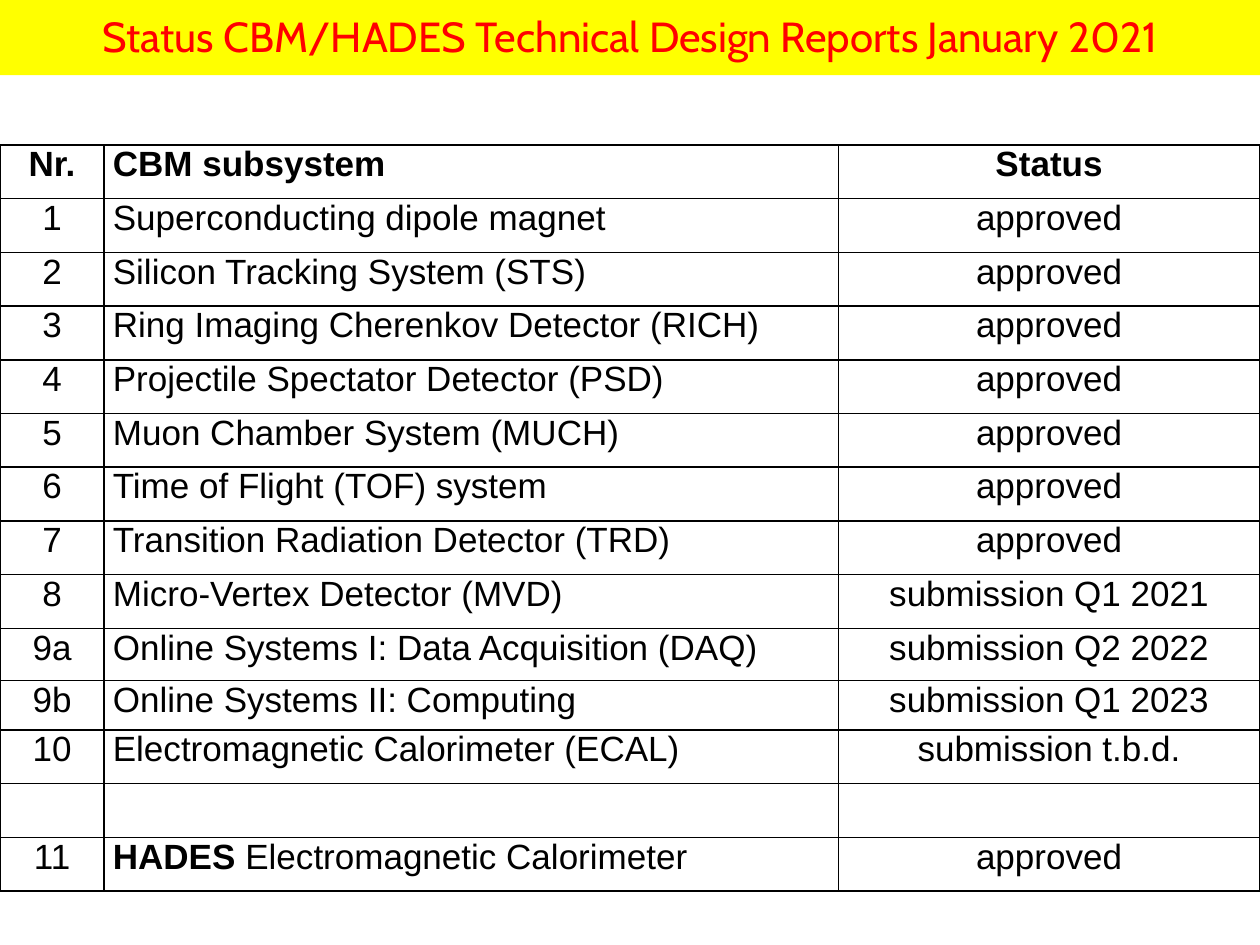
from dataclasses import dataclass

from lxml import etree
from pptx import Presentation
from pptx import util as u
from pptx.dml import color
from pptx.enum import shapes, text
from pptx.oxml import ns


@dataclass(frozen=True)
class Theme:
    banner: str = "FFFF00"
    title: str = "FF0000"
    ink: str = "000000"
    title_font: str = "Cabin"
    table_font: str = "Arial"
    title_size: float = 24
    table_size: float = 20
    border: float = 1
    cell_margin: float = 5


@dataclass
class Builder:
    theme: Theme
    slide: object

    def style(self, paragraph, name, size, rgb, align, bold=False):
        paragraph.alignment = align
        font = paragraph.font
        font.name, font.size, font.bold = name, u.Pt(size), bold
        font.color.rgb = color.RGBColor.from_string(rgb)

    def banner(self, wording, left, top, width, height):
        theme = self.theme
        shape = self.slide.shapes.add_shape(
            shapes.MSO_SHAPE.RECTANGLE, *map(u.Pt, (left, top, width, height)))
        shape.shadow.inherit = False
        shape.fill.solid()
        shape.fill.fore_color.rgb = color.RGBColor.from_string(theme.banner)
        shape.line.fill.background()
        frame = shape.text_frame
        frame.word_wrap = True
        frame.vertical_anchor = text.MSO_ANCHOR.MIDDLE
        paragraph = frame.paragraphs[0]
        paragraph.text = wording
        self.style(paragraph, theme.title_font, theme.title_size, theme.title,
                   text.PP_ALIGN.CENTER)

    def borders(self, cell):
        properties = cell._tc.get_or_add_tcPr()
        for position, side in enumerate(("lnL", "lnR", "lnT", "lnB")):
            line = etree.Element(ns.qn(f"a:{side}"), w=str(u.Pt(self.theme.border)))
            fill = etree.SubElement(line, ns.qn("a:solidFill"))
            etree.SubElement(fill, ns.qn("a:srgbClr"), val=self.theme.ink)
            properties.insert(position, line)

    def cell(self, cell, wording, align, bold):
        theme = self.theme
        cell.margin_left = cell.margin_right = u.Pt(theme.cell_margin)
        cell.margin_top = cell.margin_bottom = u.Pt(0)
        cell.fill.background()
        self.borders(cell)
        paragraph = cell.text_frame.paragraphs[0]
        if isinstance(wording, tuple):
            strong, rest = wording
            for part, weight in ((strong, True), (rest, False)):
                run = paragraph.add_run()
                run.text, run.font.bold = part, weight
        else:
            paragraph.text = wording
        self.style(paragraph, theme.table_font, theme.table_size, theme.ink,
                   align, bold)

    def table(self, rows, left, top, widths, heights, aligns):
        table = self.slide.shapes.add_table(
            len(rows), len(widths), u.Pt(left), u.Pt(top),
            u.Pt(sum(widths)), u.Pt(sum(heights))).table
        table.first_row = table.horz_banding = False
        for column, width in zip(table.columns, widths):
            column.width = u.Pt(width)
        for index, (row, height) in enumerate(zip(rows, heights)):
            table.rows[index].height = u.Pt(height)
            for position, (wording, align) in enumerate(zip(row, aligns)):
                self.cell(table.cell(index, position), wording, align, index == 0)


SUBSYSTEMS = [
    ("Nr.", "CBM subsystem", "Status"),
    ("1", "Superconducting dipole magnet", "approved"),
    ("2", "Silicon Tracking System (STS)", "approved"),
    ("3", "Ring Imaging Cherenkov Detector (RICH)", "approved"),
    ("4", "Projectile Spectator Detector (PSD)", "approved"),
    ("5", "Muon Chamber System (MUCH)", "approved"),
    ("6", "Time of Flight (TOF) system", "approved"),
    ("7", "Transition Radiation Detector (TRD)", "approved"),
    ("8", "Micro-Vertex Detector (MVD)", "submission Q1 2021"),
    ("9a", "Online Systems I: Data Acquisition (DAQ)", "submission Q2 2022"),
    ("9b", "Online Systems II: Computing", "submission Q1 2023"),
    ("10", "Electromagnetic Calorimeter (ECAL)", "submission t.b.d."),
    ("", "", ""),
    ("11", ("HADES ", "Electromagnetic Calorimeter"), "approved"),
]


def main():
    presentation = Presentation()
    presentation.slide_width, presentation.slide_height = u.Pt(720), u.Pt(540)
    slide = presentation.slides.add_slide(presentation.slide_layouts[6])
    builder = Builder(Theme(), slide)
    builder.banner("Status CBM/HADES Technical Design Reports January 2021",
                   0, -2, 720, 45)
    row_heights = [30.7] * 9 + [29.7, 28.4] + [30.7] * 3
    center, justify = text.PP_ALIGN.CENTER, text.PP_ALIGN.JUSTIFY
    builder.table(SUBSYSTEMS, 0, 82.8, (59.5, 419.5, 241), row_heights,
                  (center, justify, center))
    presentation.save("out.pptx")


if __name__ == "__main__":
    main()
